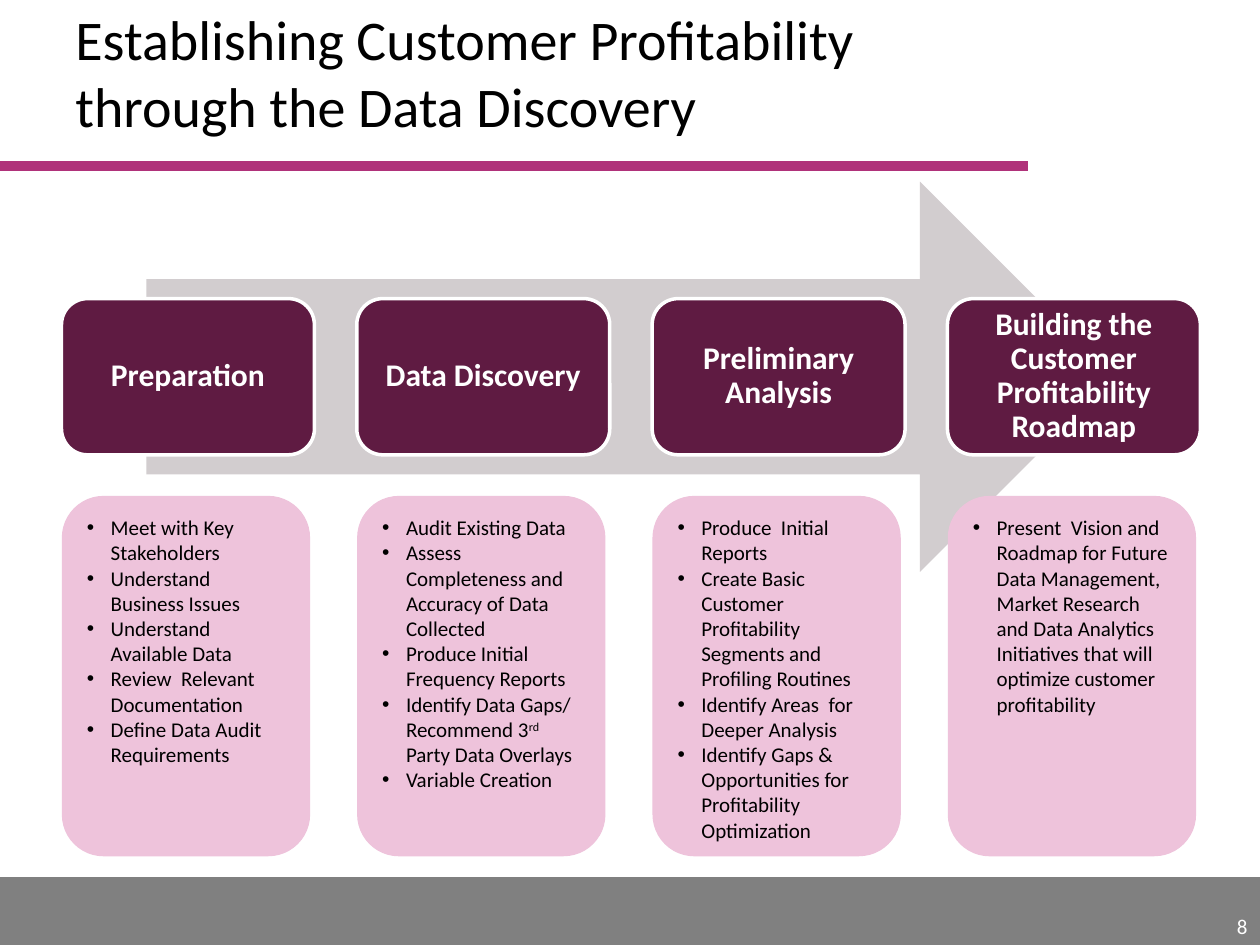
from dataclasses import dataclass

from lxml.etree import SubElement
from pptx import Presentation
from pptx.dml.color import RGBColor
from pptx.enum.shapes import MSO_CONNECTOR as Connector, MSO_SHAPE as Shape
from pptx.enum.text import MSO_ANCHOR as Anchor, PP_ALIGN as Align
from pptx.oxml.ns import qn
from pptx.util import Cm, Pt


@dataclass(frozen=True)
class Theme:
    font: str = "Calibri"
    black: str = "000000"
    white: str = "FFFFFF"
    grey: str = "808080"
    magenta: str = "B0327A"
    plum: str = "5F1B42"
    pink: str = "EEC3DB"
    arrow: str = "D2CDCF"
    title_size: int = 32
    step_size: int = 18
    body_size: int = 12


THEME = Theme()
SLIDE_W, SLIDE_H = 25.4, 19.05

# Each step: heading and its tasks; a tuple is (before, superscript, after)
STEPS = [
    ("Preparation", [
        "Meet with Key Stakeholders",
        "Understand Business Issues",
        "Understand Available Data",
        "Review  Relevant Documentation",
        "Define Data Audit Requirements",
    ]),
    ("Data Discovery", [
        "Audit Existing Data",
        "Assess Completeness and Accuracy of Data Collected",
        "Produce Initial Frequency Reports",
        ("Identify Data Gaps/ Recommend 3", "rd", " Party Data Overlays"),
        "Variable Creation",
    ]),
    ("Preliminary Analysis", [
        "Produce  Initial Reports",
        "Create Basic Customer Profitability Segments and Profiling Routines",
        "Identify Areas  for Deeper Analysis",
        "Identify Gaps & Opportunities for Profitability Optimization",
    ]),
    ("Building the Customer Profitability Roadmap", [
        "Present  Vision and Roadmap for Future Data Management, Market Research "
        "and Data Analytics Initiatives that will optimize customer profitability",
    ]),
]


def color(code):
    return RGBColor.from_string(code)


def style(paragraph, size, code, bold=False, align=Align.LEFT):
    paragraph.alignment = align
    font = paragraph.font
    font.name, font.size, font.bold = THEME.font, Pt(size), bold
    font.color.rgb = color(code)


def add_block(slide, kind, left, top, width, height, fill, line=None, weight=0.75):
    block = slide.shapes.add_shape(kind, Cm(left), Cm(top), Cm(width), Cm(height))
    block.shadow.inherit = False
    block.fill.solid()
    block.fill.fore_color.rgb = color(fill)
    if line:
        block.line.color.rgb = color(line)
        block.line.width = Pt(weight)
    else:
        block.line.fill.background()
    return block


def add_label(slide, left, top, width, height, text, size, code, align=Align.LEFT):
    frame = slide.shapes.add_textbox(Cm(left), Cm(top), Cm(width), Cm(height)).text_frame
    frame.word_wrap = True
    frame.vertical_anchor = Anchor.BOTTOM
    frame.text = text
    style(frame.paragraphs[0], size, code, align=align)


def add_bullet(paragraph, indent=0.48):
    properties = paragraph._p.get_or_add_pPr()
    properties.set("marL", str(Cm(indent)))
    properties.set("indent", str(-Cm(indent)))
    SubElement(properties, qn("a:buFont"), typeface="Arial")
    SubElement(properties, qn("a:buChar"), char="•")


def header(slide, left, top, width, height):
    add_label(slide, left + 1.27, top + 0.61, 19.46, 2.31,
              "Establishing Customer Profitability through the Data Discovery",
              THEME.title_size, THEME.black)
    bottom = Cm(top + height)
    rule = slide.shapes.add_connector(Connector.STRAIGHT, Cm(left), bottom,
                                      Cm(left + width), bottom)
    rule.line.color.rgb = color(THEME.magenta)
    rule.line.width = Pt(6)
    SubElement(rule._element.spPr, qn("a:effectLst"))


def footer(slide, left, top, width, height):
    add_block(slide, Shape.RECTANGLE, left, top, width, height, THEME.grey, THEME.grey)
    number_w, number_h = 5.28, 0.81
    add_label(slide, left + width - number_w, top + height - number_h, number_w, number_h,
              "8", THEME.body_size, THEME.white, Align.RIGHT)


def step_card(slide, left, top, width, height, heading):
    card = add_block(slide, Shape.ROUNDED_RECTANGLE, left, top, width, height,
                     THEME.plum, THEME.white, 2)
    frame = card.text_frame
    frame.word_wrap = True
    frame.vertical_anchor = Anchor.MIDDLE
    frame.margin_left = frame.margin_right = Cm(0.18)
    frame.margin_top = frame.margin_bottom = Cm(0.18)
    frame.text = heading
    paragraph = frame.paragraphs[0]
    paragraph.line_spacing = 0.9
    style(paragraph, THEME.step_size, THEME.white, bold=True, align=Align.CENTER)


def task_list(slide, left, top, width, height, tasks):
    panel = add_block(slide, Shape.ROUNDED_RECTANGLE, left, top, width, height,
                      THEME.pink, THEME.pink)
    frame = panel.text_frame
    frame.word_wrap = True
    frame.vertical_anchor = Anchor.TOP
    for index, task in enumerate(tasks):
        paragraph = frame.add_paragraph() if index else frame.paragraphs[0]
        add_bullet(paragraph)
        style(paragraph, THEME.body_size, THEME.black)
        parts = (task,) if isinstance(task, str) else task
        for position, text in enumerate(parts):
            run = paragraph.add_run()
            run.text = text
            if position == 1:
                run.font._element.set("baseline", "30000")


def process(slide, left, top, width, height):
    # Arrow behind the steps
    add_block(slide, Shape.RIGHT_ARROW, left + 1.71, top, 19.53, 7.87, THEME.arrow)

    # One column for each step: heading card above its tasks
    card_w, card_h, list_w, list_h = 5.1, 3.15, 4.98, 7.24
    pitch = (width - card_w) / (len(STEPS) - 1)
    for index, (heading, tasks) in enumerate(STEPS):
        column = left + index * pitch
        step_card(slide, column, top + 2.36, card_w, card_h, heading)
        task_list(slide, column + 0.02, top + height - list_h, list_w, list_h, tasks)


def main():
    deck = Presentation()
    deck.slide_width, deck.slide_height = Cm(SLIDE_W), Cm(SLIDE_H)
    slide = deck.slides.add_slide(deck.slide_layouts[6])
    footer(slide, 0, 17.7, SLIDE_W, 1.35)
    header(slide, 0, 0, 20.73, 3.35)
    process(slide, 1.24, 3.66, 22.96, 13.59)
    deck.save("out.pptx")


if __name__ == "__main__":
    main()
